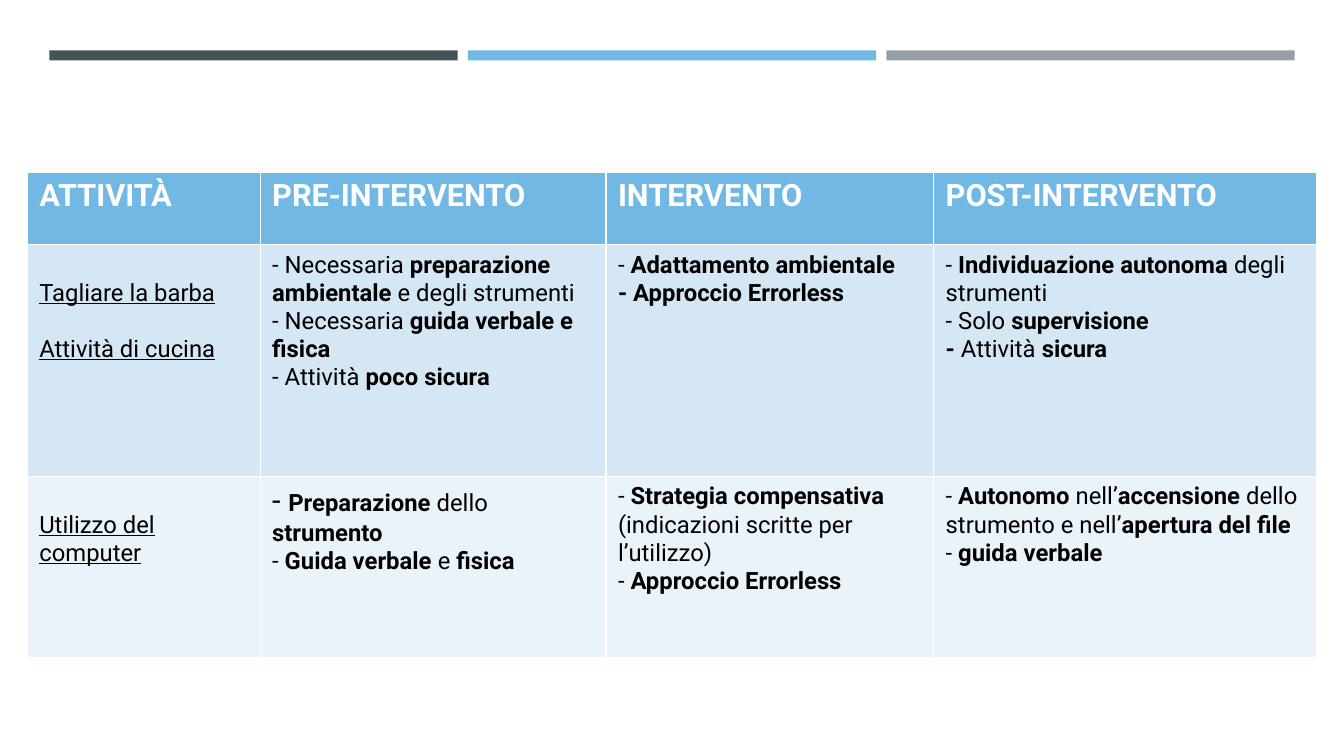
from dataclasses import dataclass

from pptx import Presentation
from pptx.dml.color import RGBColor
from pptx.enum.shapes import MSO_SHAPE
from pptx.slide import Slide
from pptx.table import Table, _Cell
from pptx.util import Inches, Pt

RECTANGLE = MSO_SHAPE.RECTANGLE
BOLD_MARK = "*"


@dataclass(frozen=True)
class Theme:
    slate: RGBColor = RGBColor(0x46, 0x53, 0x59)
    blue: RGBColor = RGBColor(0x71, 0xB9, 0xE4)
    gray: RGBColor = RGBColor(0x96, 0x9F, 0xA7)
    white: RGBColor = RGBColor(0xFF, 0xFF, 0xFF)
    black: RGBColor = RGBColor(0x00, 0x00, 0x00)
    band_dark: RGBColor = RGBColor(0xD5, 0xE6, 0xF5)
    band_light: RGBColor = RGBColor(0xEB, 0xF3, 0xFA)
    font: str = "Roboto"
    header_size: Pt = Pt(22)
    body_size: Pt = Pt(17)
    line_gap: Pt = Pt(20)


@dataclass(frozen=True)
class CellText:
    lines: tuple[str, ...]
    activity: bool = False
    first_run_size: Pt | None = None


@dataclass(frozen=True)
class RowStyle:
    fill: RGBColor
    color: RGBColor
    size: Pt


THEME = Theme()
HEADER = RowStyle(THEME.blue, THEME.white, THEME.header_size)
DARK_BAND = RowStyle(THEME.band_dark, THEME.black, THEME.body_size)
LIGHT_BAND = RowStyle(THEME.band_light, THEME.black, THEME.body_size)

BAR_COLORS = (THEME.slate, THEME.blue, THEME.gray)
BAR_LEFT, BAR_TOP, BAR_WIDTH, BAR_HEIGHT, BAR_STEP = 0.49, 0.5, 4.05, 0.1, 4.15

COLUMN_WIDTHS = (2.31, 3.43, 3.25, 3.8)
ROW_HEIGHTS = (0.72, 2.3, 1.79)
TABLE_LEFT, TABLE_TOP = 0.27, 1.71
SIDE_MARGIN, TOP_MARGIN, ACTIVITY_TOP_MARGIN = 0.12, 0.06, 0.34

TITLES = ("ATTIVITÀ", "PRE-INTERVENTO", "INTERVENTO", "POST-INTERVENTO")
ROWS = (
    (HEADER, tuple(CellText((f"*{title}*",)) for title in TITLES)),
    (DARK_BAND, (
        CellText(("Tagliare la barba", "Attività di cucina"), activity=True),
        CellText((
            "- Necessaria *preparazione ambientale *e degli strumenti",
            "- Necessaria *guida verbale e fisica*",
            "- Attività *poco sicura*",
        )),
        CellText(("- *Adattamento ambientale*", "*- Approccio Errorless*")),
        CellText((
            "- *Individuazione autonoma *degli strumenti",
            "- Solo *supervisione*",
            "*- *Attività *sicura*",
        )),
    )),
    (LIGHT_BAND, (
        CellText(("Utilizzo del computer",), activity=True),
        CellText(
            ("- *Preparazione* dello *strumento*", "- *Guida verbale *e* fisica*"),
            first_run_size=THEME.header_size,
        ),
        CellText((
            "- *Strategia compensativa *(indicazioni scritte per l’utilizzo)",
            "- *Approccio Errorless*",
        )),
        CellText((
            "- *Autonomo* nell’*accensione* dello strumento e nell’*apertura del file*",
            "- *guida verbale*",
        )),
    )),
)


def draw_bars(slide: Slide) -> None:
    for index, color in enumerate(BAR_COLORS):
        bar = slide.shapes.add_shape(
            RECTANGLE, Inches(BAR_LEFT + index * BAR_STEP), Inches(BAR_TOP),
            Inches(BAR_WIDTH), Inches(BAR_HEIGHT),
        )
        bar.shadow.inherit = False
        bar.fill.solid()
        bar.fill.fore_color.rgb = color
        bar.line.fill.background()


def fill_cell(cell: _Cell, content: CellText, style: RowStyle) -> None:
    cell.fill.solid()
    cell.fill.fore_color.rgb = style.fill
    cell.margin_left = cell.margin_right = Inches(SIDE_MARGIN)
    cell.margin_top = Inches(ACTIVITY_TOP_MARGIN if content.activity else TOP_MARGIN)
    cell.margin_bottom = Inches(TOP_MARGIN)
    frame = cell.text_frame
    for line_index, line in enumerate(content.lines):
        paragraph = frame.add_paragraph() if line_index else frame.paragraphs[0]
        if content.activity and line_index:
            paragraph.space_before = THEME.line_gap
        paragraph.font.name = THEME.font
        paragraph.font.size = style.size
        paragraph.font.color.rgb = style.color
        paragraph.font.underline = content.activity
        for part_index, part in enumerate(line.split(BOLD_MARK)):
            if part:
                run = paragraph.add_run()
                run.text = part
                run.font.bold = part_index % 2 == 1
    if content.first_run_size:
        frame.paragraphs[0].runs[0].font.size = content.first_run_size


def draw_table(slide: Slide) -> Table:
    table = slide.shapes.add_table(
        len(ROW_HEIGHTS), len(COLUMN_WIDTHS), Inches(TABLE_LEFT), Inches(TABLE_TOP),
        Inches(sum(COLUMN_WIDTHS)), Inches(sum(ROW_HEIGHTS)),
    ).table
    for column, width in zip(table.columns, COLUMN_WIDTHS):
        column.width = Inches(width)
    for row, height, (style, contents) in zip(table.rows, ROW_HEIGHTS, ROWS):
        row.height = Inches(height)
        for cell, content in zip(row.cells, contents):
            fill_cell(cell, content, style)
    return table


def main() -> None:
    presentation = Presentation()
    presentation.slide_width = Inches(13.33)
    presentation.slide_height = Inches(7.5)
    slide = presentation.slides.add_slide(presentation.slide_layouts[6])
    draw_bars(slide)
    draw_table(slide)
    presentation.save("out.pptx")


if __name__ == "__main__":
    main()
